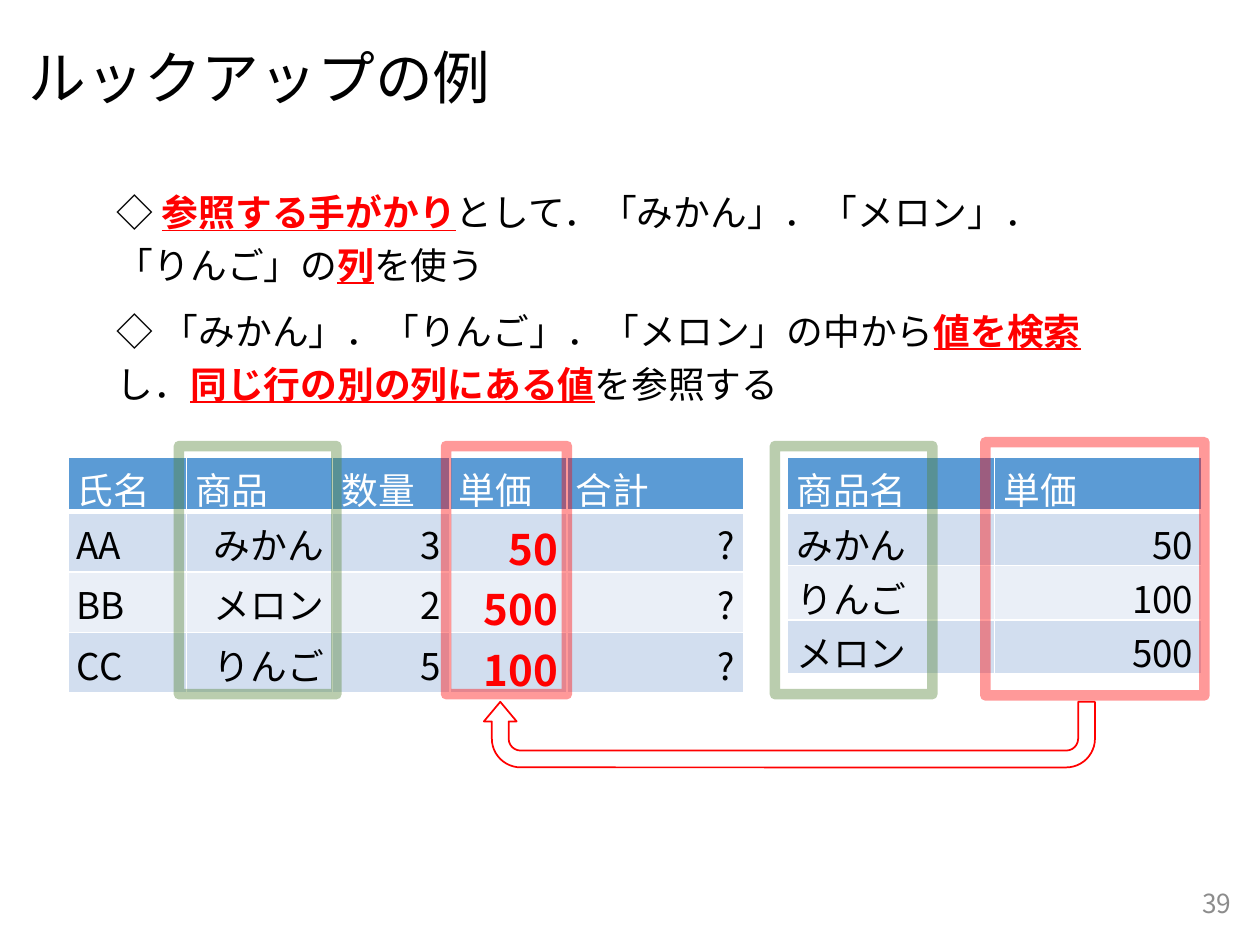
from lxml.etree import SubElement
from pptx import Presentation
from pptx.dml.color import RGBColor
from pptx.enum.shapes import MSO_SHAPE
from pptx.enum.text import MSO_ANCHOR, PP_ALIGN
from pptx.oxml.ns import qn
from pptx.util import Inches, Pt

HEADING_FONT, TABLE_FONT = "Cabin", "Noto Sans CJK JP"
BLACK, WHITE, RED, GREEN, GRAY = "000000", "FFFFFF", "FF0000", "548235", "8C8C8C"
HEADER_FILL, ODD_FILL, EVEN_FILL = "5B9BD5", "D2DEEF", "EAEFF7"


def color(hex_string):
    return RGBColor.from_string(hex_string)


def inches(values):
    return [Inches(value) for value in values]


def add_run(paragraph, text, font_name, size, hex_color, bold=False, underline=False):
    run = paragraph.add_run()
    run.text = text
    font = run.font
    font.name, font.size = font_name, Pt(size)
    font.bold, font.underline = bold, underline
    font.color.rgb = color(hex_color)
    SubElement(font._element, qn("a:ea")).set("typeface", font_name)


def add_text_frame(slide, box, anchor=MSO_ANCHOR.TOP):
    frame = slide.shapes.add_textbox(*inches(box)).text_frame
    frame.word_wrap = True
    frame.vertical_anchor = anchor
    return frame


def add_title(slide, box, text):
    paragraph = add_text_frame(slide, box, MSO_ANCHOR.MIDDLE).paragraphs[0]
    paragraph.line_spacing = 0.9
    add_run(paragraph, text, HEADING_FONT, 33, BLACK)


def add_explanation(slide, box, paragraphs):
    """Each paragraph is a list of pieces, alternating plain and emphasised."""
    frame = add_text_frame(slide, box)
    for index, pieces in enumerate(paragraphs):
        paragraph = frame.add_paragraph() if index else frame.paragraphs[0]
        paragraph.line_spacing = 1.2
        paragraph.space_before = Pt(7.5)
        for position, piece in enumerate(pieces):
            strong = position % 2 == 1
            add_run(paragraph, piece, HEADING_FONT, 21, RED if strong else BLACK, strong, strong)


def add_page_number(slide, box, number):
    paragraph = add_text_frame(slide, box, MSO_ANCHOR.MIDDLE).paragraphs[0]
    paragraph.alignment = PP_ALIGN.RIGHT
    add_run(paragraph, number, TABLE_FONT, 15, GRAY)


def set_borders(cell, bottom_width):
    properties = cell._tc.get_or_add_tcPr()
    widths = {"a:lnL": 1, "a:lnR": 1, "a:lnT": 1, "a:lnB": bottom_width}
    for index, (tag, width) in enumerate(widths.items()):
        line = properties.makeelement(qn(tag), {"w": str(Pt(width))})
        fill = SubElement(line, qn("a:solidFill"))
        SubElement(fill, qn("a:srgbClr")).set("val", WHITE)
        properties.insert(index, line)


def add_data_table(slide, box, column_widths, row_heights, rows, found_column=None):
    """The first row is the header; found_column holds the looked-up values."""
    shape = slide.shapes.add_table(len(rows), len(column_widths), *inches(box))
    table = shape.table
    for column, width in zip(table.columns, inches(column_widths)):
        column.width = width
    for row, height in zip(table.rows, inches(row_heights)):
        row.height = height
    for r, values in enumerate(rows):
        for c, value in enumerate(values):
            cell = table.cell(r, c)
            cell.margin_left = cell.margin_right = Inches(0.07)
            cell.margin_top = cell.margin_bottom = Inches(0.04)
            cell.fill.solid()
            row_fill = ODD_FILL if r % 2 else EVEN_FILL
            cell.fill.fore_color.rgb = color(row_fill if r else HEADER_FILL)
            set_borders(cell, 1 if r else 3)
            paragraph = cell.text_frame.paragraphs[0]
            if r and c:
                paragraph.alignment = PP_ALIGN.RIGHT
            if r and c == found_column:
                add_run(paragraph, value, TABLE_FONT, 24, RED, bold=True)
            else:
                add_run(paragraph, value, TABLE_FONT, 21, BLACK if r else WHITE)


def add_outline(slide, kind, box, hex_color, width):
    shape = slide.shapes.add_shape(kind, *inches(box))
    shape.shadow.inherit = False
    shape.fill.background()
    shape.line.color.rgb = color(hex_color)
    shape.line.width = Pt(width)
    return shape


def add_column_frame(slide, box, hex_color):
    """A thick frame, 40 % opaque, around a table column."""
    frame = add_outline(slide, MSO_SHAPE.RECTANGLE, box, hex_color, 6)
    line_color = frame.line._ln.find(".//" + qn("a:srgbClr"))
    SubElement(line_color, qn("a:alpha")).set("val", "40000")


def add_return_arrow(slide, box):
    arrow = add_outline(slide, MSO_SHAPE.U_TURN_ARROW, box, RED, 1)
    arrow.rotation = 180
    for index, value in enumerate([0.257, 0.25, 0.299, 0.438, 1]):
        arrow.adjustments[index] = value


def main():
    presentation = Presentation()
    presentation.slide_width, presentation.slide_height = Inches(10), Inches(7.5)
    slide = presentation.slides.add_slide(presentation.slide_layouts[6])

    add_title(slide, (0.13, 0.21, 9.65, 0.86), "ルックアップの例")
    add_explanation(slide, (0.83, 1.39, 8.04, 4.24), [
        ["◇ ", "参照する手がかり", "として．「みかん」．「メロン」．「りんご」の", "列", "を使う"],
        ["◇ 「みかん」．「りんご」．「メロン」の中から", "値を検索", "し．",
         "同じ行の別の列にある値", "を参照する"],
    ])
    add_page_number(slide, (7.62, 6.97, 2.25, 0.4), "39")

    add_data_table(slide, (6.25, 3.63, 3.29, 1.7), [1.645] * 2, [0.42] * 4, [
        ["商品名", "単価"],
        ["みかん", "50"],
        ["りんご", "100"],
        ["メロン", "500"],
    ])
    add_data_table(
        slide, (0.54, 3.63, 5.36, 1.85), [0.94, 1.16, 0.93, 0.93, 1.4], [0.42] + [0.47] * 3, [
            ["氏名", "商品", "数量", "単価", "合計"],
            ["AA", "みかん", "3", "50", "?"],
            ["BB", "メロン", "2", "500", "?"],
            ["CC", "りんご", "5", "100", "?"],
        ], found_column=3)

    add_column_frame(slide, (7.82, 3.51, 1.74, 2.01), RED)
    for left, width, hex_color in [(3.54, 0.96, RED), (1.42, 1.25, GREEN), (6.15, 1.25, GREEN)]:
        add_column_frame(slide, (left, 3.54, width, 1.97), hex_color)
    add_return_arrow(slide, (3.84, 5.57, 4.85, 0.52))

    presentation.save("out.pptx")


if __name__ == "__main__":
    main()
